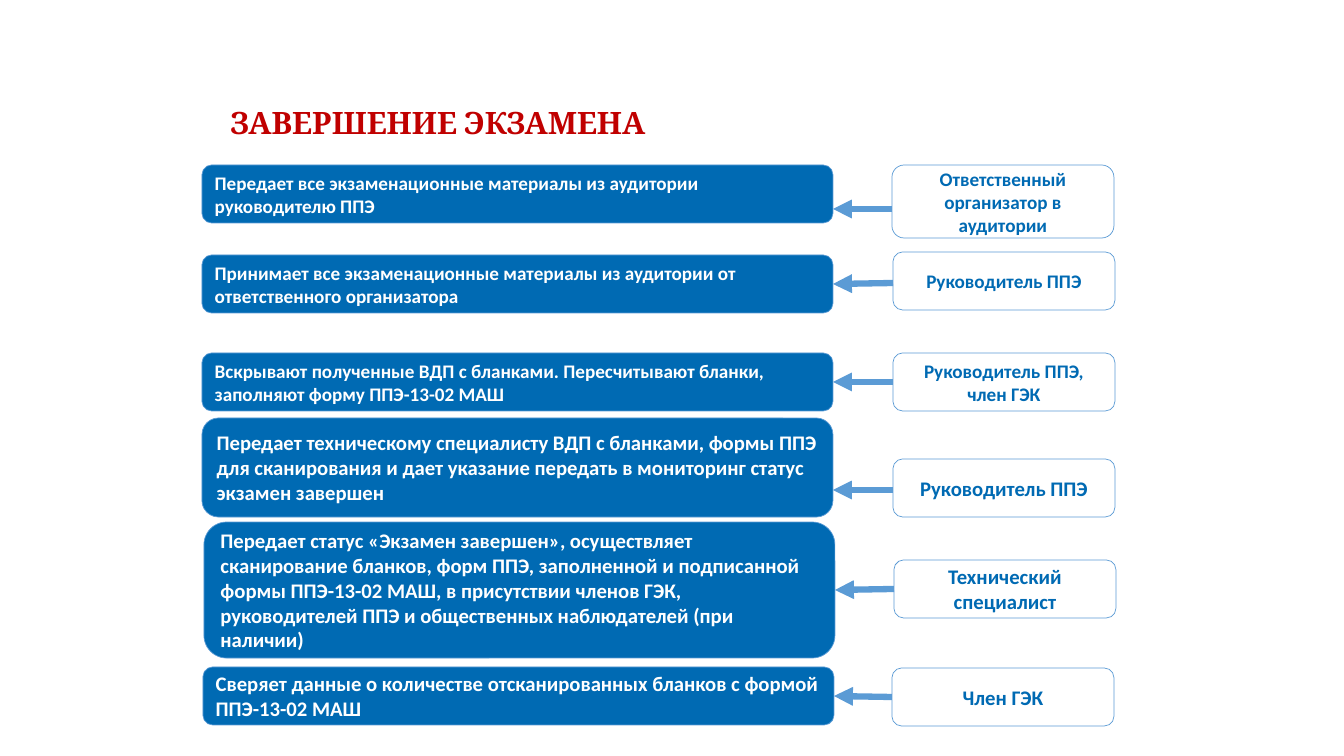
from lxml.etree import SubElement
from pptx import Presentation
from pptx.dml.color import RGBColor
from pptx.enum.shapes import MSO_CONNECTOR as CONNECTOR, MSO_SHAPE as SHAPE
from pptx.enum.text import MSO_ANCHOR as ANCHOR, PP_ALIGN as ALIGN
from pptx.oxml.ns import qn
from pptx.util import Pt

PX = 914400 / 100.8
RED = RGBColor(0xC0, 0x00, 0x00)
DEEP_BLUE = RGBColor(0x00, 0x6A, 0xB3)
LIGHT_BLUE = RGBColor(0x5B, 0x9B, 0xD5)
WHITE = RGBColor(0xFF, 0xFF, 0xFF)
ACTION_WIDTH, ROLE_WIDTH = 631, 222


def px(*lengths):
    return [round(length * PX) for length in lengths]


def add_card(box, text, size, fill, color, align):
    card = slide.shapes.add_shape(SHAPE.ROUNDED_RECTANGLE, *px(*box))
    card.shadow.inherit = False
    card.fill.solid()
    card.fill.fore_color.rgb = fill
    card.line.color.rgb = LIGHT_BLUE
    card.line.width = Pt(0.5)
    frame = card.text_frame
    frame.word_wrap = True
    frame.vertical_anchor = ANCHOR.MIDDLE
    frame.text = text
    paragraph = frame.paragraphs[0]
    paragraph.alignment = align
    paragraph.font.name = "Calibri"
    paragraph.font.size = Pt(size)
    paragraph.font.bold = True
    paragraph.font.color.rgb = color
    return card


deck = Presentation()
deck.slide_width, deck.slide_height = px(1344, 756)
slide = deck.slides.add_slide(deck.slide_layouts[5])

heading = slide.shapes.title
heading.left, heading.top, heading.width, heading.height = px(220, 62, 907, 126)
heading.text_frame.text = "ЗАВЕРШЕНИЕ ЭКЗАМЕНА"
heading.text_frame.vertical_anchor = ANCHOR.MIDDLE
heading_line = heading.text_frame.paragraphs[0]
heading_line.alignment = ALIGN.LEFT
heading_line.line_spacing = 0.9
heading_line.font.name = "Cambria"
heading_line.font.size = Pt(22)
heading_line.font.bold = True
heading_line.font.color.rgb = RED

steps = [
    (13.7, (202, 165, 58), "Передает все экзаменационные материалы из аудитории руководителю ППЭ",
     (892, 165, 73), "Ответственный организатор в аудитории", 209),
    (13.7, (202, 255, 58), "Принимает все экзаменационные материалы из аудитории от "
     "ответственного организатора",
     (893, 252, 58), "Руководитель ППЭ", 283),
    (13.7, (202, 353, 58), "Вскрывают полученные ВДП с бланками. Пересчитывают бланки, "
     "заполняют форму ППЭ-13-02 МАШ",
     (893, 353, 58), "Руководитель ППЭ, член ГЭК", 381),
    (14.8, (202, 418, 99), "Передает техническому специалисту ВДП с бланками, формы ППЭ для "
     "сканирования и дает указание передать в мониторинг статус экзамен завершен",
     (893, 459, 58), "Руководитель ППЭ", 490),
    (14.8, (204, 522, 136), "Передает статус «Экзамен завершен», осуществляет сканирование "
     "бланков, форм ППЭ, заполненной и подписанной формы ППЭ-13-02 МАШ, в присутствии членов ГЭК, "
     "руководителей ППЭ и общественных наблюдателей (при наличии)",
     (894, 560, 58), "Технический специалист", 590),
    (14.8, (203, 667, 58), "Сверяет данные о количестве отсканированных бланков с формой "
     "ППЭ-13-02 МАШ",
     (892, 668, 58), "Член ГЭК", 696),
]

for size, (action_x, action_y, action_h), action_text, (role_x, role_y, role_h), role_text, arrow_y in steps:
    action = add_card((action_x, action_y, ACTION_WIDTH, action_h), action_text,
                      size, DEEP_BLUE, WHITE, ALIGN.LEFT)
    role = add_card((role_x, role_y, ROLE_WIDTH, role_h), role_text,
                    size, WHITE, DEEP_BLUE, ALIGN.CENTER)
    arrow = slide.shapes.add_connector(
        CONNECTOR.STRAIGHT, *px(role_x, arrow_y, action_x + ACTION_WIDTH, arrow_y))
    if abs(role_y + role_h / 2 - arrow_y) < 2:
        arrow.begin_connect(role, 1)
    if abs(action_y + action_h / 2 - arrow_y) < 2:
        arrow.end_connect(action, 3)
    arrow.line.color.rgb = LIGHT_BLUE
    arrow.line.width = Pt(4.5)
    SubElement(arrow.line._get_or_add_ln(), qn("a:tailEnd"), type="triangle")
    SubElement(arrow._element.spPr, qn("a:effectLst"))

deck.save("out.pptx")
